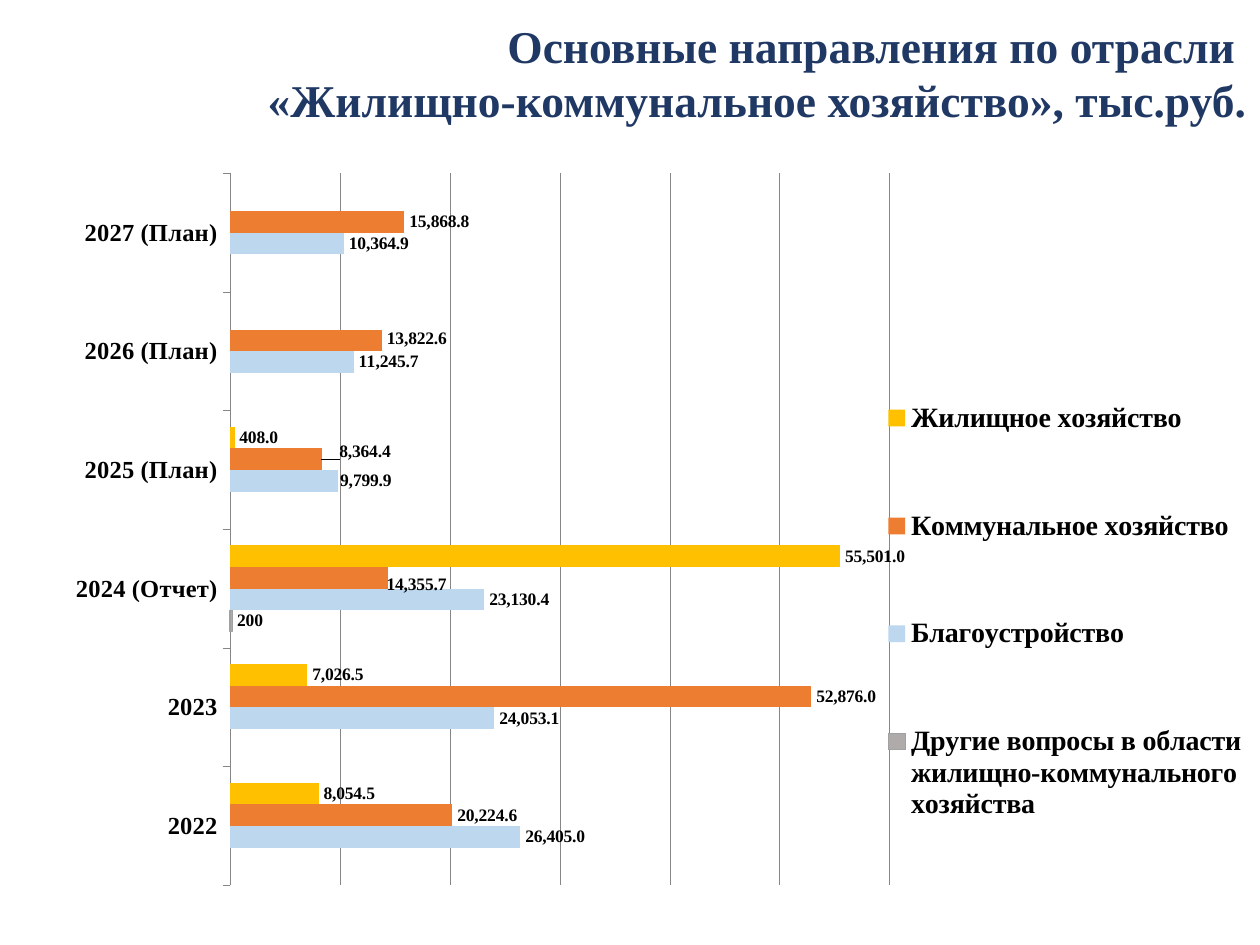
"""Build a slide with a bar chart of housing and utilities spending by year."""
from lxml import etree
from pptx import Presentation
from pptx import util as u
from pptx.chart.data import CategoryChartData
from pptx.dml.color import RGBColor
from pptx.enum import chart as ch, text
from pptx.oxml.ns import qn

WIDTH, HEIGHT = 10, 7.5
FACE = "Times New Roman"
C15 = "http://schemas.microsoft.com/office/drawing/2012/chart"
HEADING = ["Основные направления по отрасли ", "«Жилищно-коммунальное хозяйство», тыс.руб."]
YEARS = ["2022", "2023", "2024 (Отчет)", "2025 (План)", "2026 (План)", "2027 (План)"]
DECIMAL = "#,##0.0"
BRANCHES = [
    ("Другие вопросы в области жилищно-коммунального хозяйства", "AFABAB", "General",
     [None, None, 200, None, None, None], {}),
    ("Благоустройство", "BDD7EE", DECIMAL,
     [26405, 24053.1, 23130.4, 9799.9, 11245.7, 10364.9], {3: (-0.002, 0)}),
    ("Коммунальное хозяйство", "ED7D31", DECIMAL,
     [20224.6, 52876, 14355.7, 8364.4, 13822.6, 15868.8],
     {2: (-0.005, 0.008), 3: (0.01, -0.01), 4: (0, -0.003)}),
    ("Жилищное хозяйство", "FFC000", DECIMAL,
     [8054.5, 7026.5, 55501, 408, None, None], {}),
]


def rgb(value):
    return RGBColor.from_string(value)


def style(font, size, color="000000"):
    font.name, font.size, font.bold = FACE, u.Pt(size), True
    font.color.rgb = rgb(color)


def write(paragraph, line, align, **look):
    run = paragraph.add_run()
    run.text = line
    paragraph.alignment = align
    style(run.font, **look)


def place(item, left, top, width, height):
    item.left, item.top, item.width, item.height = map(u.Inches, (left, top, width, height))


def set_layout(parent, index, **values):
    for old in parent.findall(qn("c:layout")):
        parent.remove(old)
    layout = etree.Element(qn("c:layout"))
    manual = etree.SubElement(layout, qn("c:manualLayout"))
    for tag, value in values.items():
        etree.SubElement(manual, qn(f"c:{tag}")).set("val", str(value))
    parent.insert(index, layout)


def shift_label(series, index, shift, number_format):
    label = series.points[index].data_label
    label.position = ch.XL_LABEL_POSITION.OUTSIDE_END
    style(label.font, 10)
    node = series._element.xpath(f"c:dLbls/c:dLbl[c:idx/@val='{index}']")[0]
    set_layout(node, 1, x=shift[0], y=shift[1])
    shown = etree.Element(qn("c:numFmt"), formatCode=number_format, sourceLinked="0")
    node.insert(2, shown)


def hide_leader_lines(series):
    labels = series._element.find(qn("c:dLbls"))
    extensions = etree.SubElement(labels, qn("c:extLst"))
    extension = etree.SubElement(extensions, qn("c:ext"), nsmap={"c15": C15},
                                 uri="{CE6537A1-D6FC-4f65-9D91-7224C49458BB}")
    etree.SubElement(extension, f"{{{C15}}}showLeaderLines", val="0")


def add_heading(slide):
    heading = slide.shapes.title
    place(heading, 0.62, 0.09, 9.38, 1.41)
    frame = heading.text_frame
    frame.word_wrap = True
    frame.auto_size = text.MSO_AUTO_SIZE.NONE
    frame.vertical_anchor = text.MSO_ANCHOR.TOP
    for number, line in enumerate(HEADING):
        paragraph = frame.add_paragraph() if number else frame.paragraphs[0]
        write(paragraph, line, text.PP_ALIGN.RIGHT, size=26, color="203864")


def add_spending(slide):
    data = CategoryChartData(number_format=DECIMAL)
    data.categories = YEARS
    for name, _, _, values, _ in BRANCHES:
        data.add_series(name, values)
    area = map(u.Inches, (0.14, 1.12, 9.86, 6.38))
    chart = slide.shapes.add_chart(ch.XL_CHART_TYPE.BAR_CLUSTERED, *area, data).chart
    chart.has_title = False
    chart.font.name, chart.font.size = "Calibri", u.Pt(18)
    chart.font.color.rgb = rgb("000000")

    plot = chart.plots[0]
    plot.gap_width, plot.overlap, plot.vary_by_categories = 150, 0, False
    for series, (_, color, number_format, _, shifts) in zip(plot.series, BRANCHES):
        series.format.fill.solid()
        series.format.fill.fore_color.rgb = rgb(color)
        series.invert_if_negative = False
        labels = series.data_labels
        labels.show_value = True
        labels.number_format, labels.number_format_is_linked = number_format, False
        labels.position = ch.XL_LABEL_POSITION.OUTSIDE_END
        style(labels.font, 10)
        for index, shift in shifts.items():
            shift_label(series, index, shift, number_format)
        hide_leader_lines(series)
    other = plot.series[0].format.line
    other.color.rgb, other.width = rgb("A1A1A1"), u.Pt(0.75)

    years, amounts = chart.category_axis, chart.value_axis
    years.major_tick_mark = ch.XL_TICK_MARK.OUTSIDE
    style(years.tick_labels.font, 14)
    amounts.visible = False
    amounts.minimum_scale, amounts.maximum_scale, amounts.major_unit = 0, 60000, 10000
    amounts.has_major_gridlines = True
    for line in (years.format.line, amounts.major_gridlines.format.line):
        line.color.rgb, line.width = rgb("868686"), u.Pt(0.25)

    chart.has_legend = True
    legend = chart.legend
    legend.position = ch.XL_LEGEND_POSITION.RIGHT
    legend.include_in_layout = False
    style(legend.font, 16)
    set_layout(legend._element, 1, xMode="edge", yMode="edge", x=0.688, y=0.23, w=0.31, h=0.71)
    plot_area = chart._chartSpace.chart.plotArea
    set_layout(plot_area, 0, layoutTarget="inner", xMode="edge", yMode="edge",
               x=0.171, y=0.04, w=0.531, h=0.886)


def main():
    deck = Presentation()
    deck.slide_width, deck.slide_height = u.Inches(WIDTH), u.Inches(HEIGHT)
    slide = deck.slides.add_slide(deck.slide_layouts[5])
    add_heading(slide)
    add_spending(slide)
    deck.save("out.pptx")


if __name__ == "__main__":
    main()
